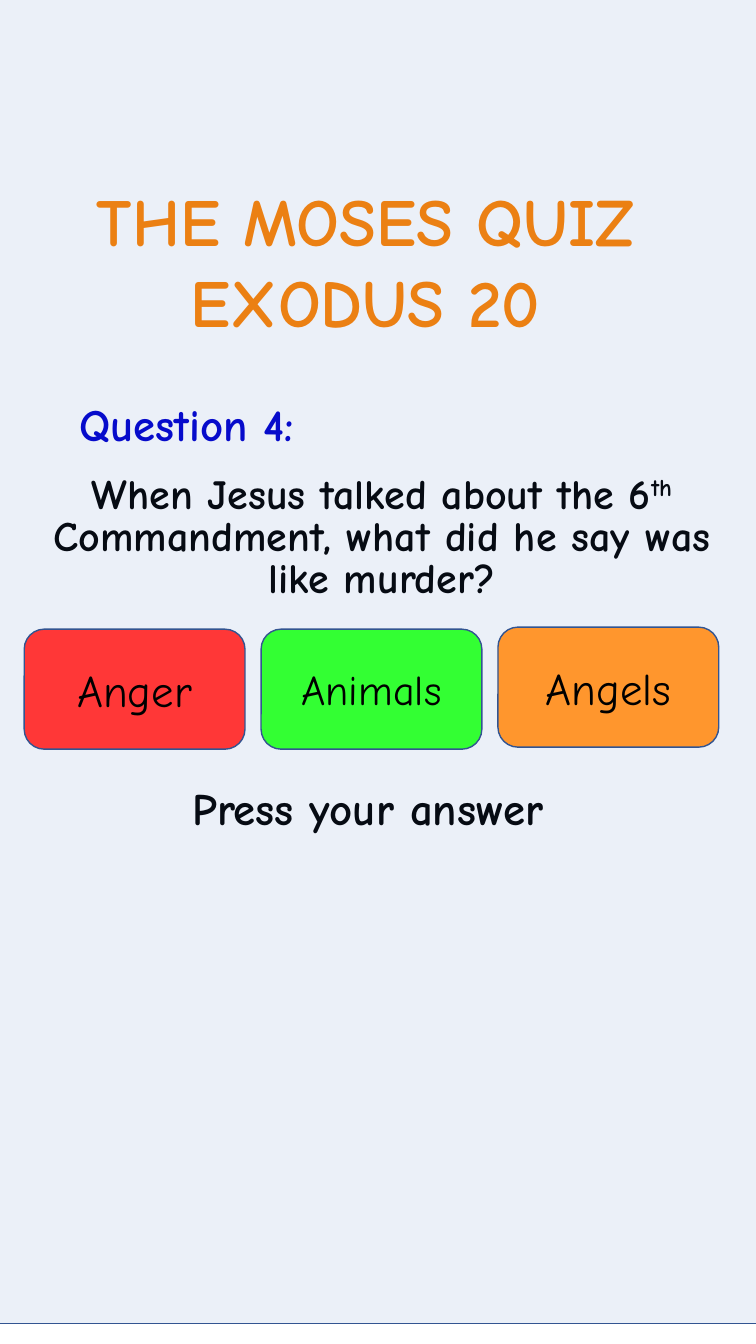
from lxml import etree
from pptx import Presentation
from pptx.dml.color import RGBColor
from pptx.enum.shapes import MSO_SHAPE
from pptx.enum.text import MSO_ANCHOR, MSO_AUTO_SIZE, PP_ALIGN
from pptx.oxml.ns import qn
from pptx.util import Inches, Pt

LEFT, CENTER = PP_ALIGN.LEFT, PP_ALIGN.CENTER
TOP, MIDDLE = MSO_ANCHOR.TOP, MSO_ANCHOR.MIDDLE
NO_FIT = MSO_AUTO_SIZE.NONE
RECTANGLE, ROUNDED = MSO_SHAPE.RECTANGLE, MSO_SHAPE.ROUNDED_RECTANGLE

FONT = "Comic Neue"
BLACK = RGBColor(0x00, 0x00, 0x00)
TITLE_ORANGE = RGBColor(0xFF, 0x82, 0x00)
QUESTION_BLUE = RGBColor(0x00, 0x00, 0xCC)
VEIL_BLUE = RGBColor(0x44, 0x72, 0xC4)
BORDER_BLUE = RGBColor(0x32, 0x54, 0x91)
RED = RGBColor(0xFF, 0x37, 0x37)
GREEN = RGBColor(0x33, 0xFF, 0x33)
ORANGE = RGBColor(0xFF, 0x96, 0x2D)

ANSWERS = [("Anger", RED, 32, 6.24), ("Animals", GREEN, 30, 6.24), ("Angels", ORANGE, 32, 6.22)]
ANSWER_LEFT, ANSWER_STEP = 0.24, 2.35


def place(shape, left, top, width, height):
    shape.left, shape.top = Inches(left), Inches(top)
    shape.width, shape.height = Inches(width), Inches(height)


def write(shape, *lines, size=32, color=BLACK, bold=True, align=CENTER, anchor=TOP,
          wrap=True, spacing=None, before=0):
    frame = shape.text_frame
    frame.auto_size = NO_FIT
    frame.word_wrap = wrap
    frame.vertical_anchor = anchor
    frame.text = "\n".join(lines)
    for para in frame.paragraphs:
        para.alignment = align
        para.line_spacing = spacing
        para.space_before = Pt(before)
        for span in para.runs:
            style(span, size, color, bold)


def style(span, size, color, bold):
    span.font.name = FONT
    span.font.size = Pt(size)
    span.font.bold = bold
    span.font.color.rgb = color


def outline_text(shape, color, width):
    for para in shape.text_frame.paragraphs:
        for span in para.runs:
            line = etree.Element(qn("a:ln"), w=str(Pt(width)))
            fill = etree.SubElement(line, qn("a:solidFill"))
            etree.SubElement(fill, qn("a:srgbClr"), val=color)
            span._r.get_or_add_rPr().insert(0, line)


def add_text(page, text, left, top, width, height, **formats):
    box = page.shapes.add_textbox(Inches(left), Inches(top), Inches(width), Inches(height))
    write(box, text, **formats)


def add_panel(page, kind, color, left, top, width, height):
    panel = page.shapes.add_shape(kind, Inches(left), Inches(top), Inches(width), Inches(height))
    panel.shadow.inherit = False
    panel.fill.solid()
    panel.fill.fore_color.rgb = color
    panel.line.color.rgb = BORDER_BLUE
    panel.line.width = Pt(1)
    return panel


def add_title(page):
    title = page.shapes.title
    place(title, 0.3, 1.73, 6.89, 1.72)
    write(title, "THE MOSES QUIZ ", "EXODUS 20 ", size=48, color=TITLE_ORANGE, wrap=False)
    outline_text(title, "FF0000", 1.06)


def add_question(page):
    question = page.placeholders[1]
    place(question, 0.16, 4.67, 7.26, 1.4)
    write(question, "When Jesus talked about the 6", size=30, spacing=Pt(30), before=7.5)
    para = question.text_frame.paragraphs[0]
    for text, baseline in [("th", "30000"), (" Commandment, what did he say was like murder?", "0")]:
        span = para.add_run()
        span.text = text
        style(span, 30, BLACK, True)
        span._r.get_or_add_rPr().set("baseline", baseline)


def add_veil(page):
    veil = add_panel(page, RECTANGLE, VEIL_BLUE, -0.2, -0.2, 7.98, 13.33)
    color = veil.fill._xPr.find(qn("a:solidFill"))[0]
    etree.SubElement(color, qn("a:alpha"), val="10000")


def main():
    deck = Presentation()
    deck.slide_width, deck.slide_height = Inches(7.5), Inches(13.33)
    page = deck.slides.add_slide(deck.slide_layouts[0])
    add_title(page)
    add_question(page)
    add_text(page, "Question 4:", 0.47, 3.89, 2.77, 0.64, color=QUESTION_BLUE, wrap=False)
    add_text(page, "Press your answer", 1.81, 7.75, 4.22, 0.72, align=LEFT, spacing=0.9, before=7.5)
    add_veil(page)
    for index, (answer, color, size, top) in enumerate(ANSWERS):
        left = ANSWER_LEFT + index * ANSWER_STEP
        button = add_panel(page, ROUNDED, color, left, top, 2.19, 1.19)
        write(button, answer, size=size, bold=False, anchor=MIDDLE)
    deck.save("out.pptx")


if __name__ == "__main__":
    main()
